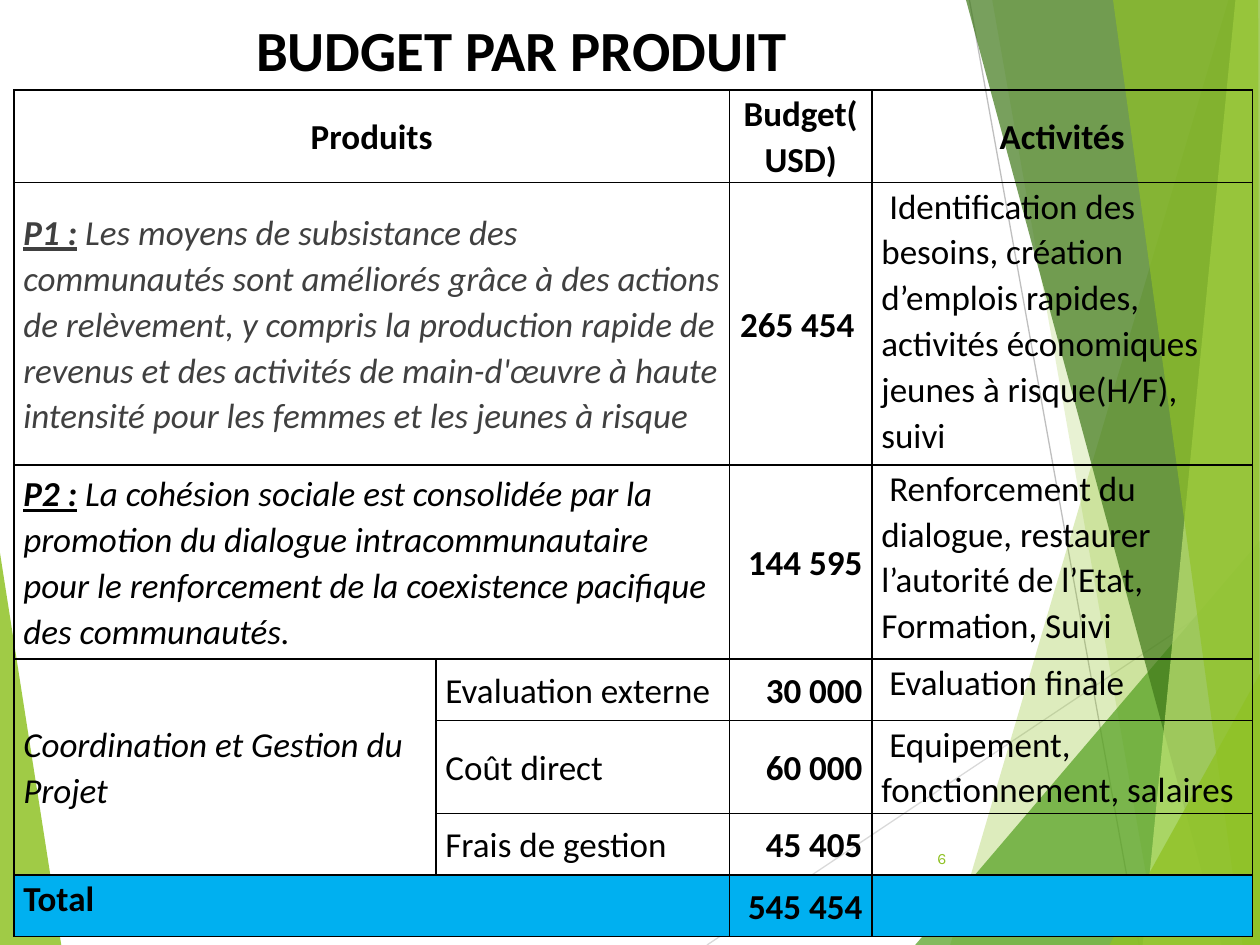
from lxml.etree import SubElement
from pptx import Presentation
from pptx.dml.color import RGBColor
from pptx.enum.shapes import MSO_CONNECTOR
from pptx.enum.text import MSO_ANCHOR, MSO_AUTO_SIZE, PP_ALIGN
from pptx.oxml import parse_xml
from pptx.oxml.ns import nsdecls, qn
from pptx.util import Pt

BLACK, GREY, GREEN, BLUE = "000000", "404040", "90C226", "00B0F0"
LEFT, CENTER, RIGHT = PP_ALIGN.LEFT, PP_ALIGN.CENTER, PP_ALIGN.RIGHT
WIDTH, HEIGHT = 720, 540


def rgb(value):
    return RGBColor.from_string(value)


class SlideWriter:
    """Keeps the style and the current slide; lengths are in points."""

    font = "Calibri"
    text_size = 20
    border = 1

    def __init__(self, slide):
        self.slide = slide

    def style(self, font, size, color=BLACK, bold=False, italic=False, name=None):
        font.name = name or self.font
        font.size = Pt(size)
        font.color.rgb = rgb(color)
        font.bold, font.italic = bold, italic

    def title(self, text, left, top, width, height):
        title = self.slide.shapes.title
        title.left, title.top = Pt(left), Pt(top)
        title.width, title.height = Pt(width), Pt(height)
        frame = title.text_frame
        frame.auto_size = MSO_AUTO_SIZE.NONE
        frame.vertical_anchor = MSO_ANCHOR.MIDDLE
        frame.text = text
        frame.paragraphs[0].alignment = CENTER
        self.style(frame.paragraphs[0].font, 32.4, bold=True)

    def page_number(self, text, left, top, width, height):
        box = self.slide.shapes.add_textbox(Pt(left), Pt(top), Pt(width), Pt(height))
        frame = box.text_frame
        frame.word_wrap = True
        frame.vertical_anchor = MSO_ANCHOR.MIDDLE
        frame.text = text
        frame.paragraphs[0].alignment = RIGHT
        self.style(frame.paragraphs[0].font, 9, GREEN, name="Karla")

    def facet(self, color, opacity, points):
        builder = self.slide.shapes.build_freeform(*points[0], scale=Pt(1))
        builder.add_line_segments(points[1:], close=True)
        facet = builder.convert_to_shape()
        facet.shadow.inherit = False
        facet.line.fill.background()
        facet.fill.solid()
        facet.fill.fore_color.rgb = rgb(color)
        tint = facet.fill._xPr.find(qn("a:solidFill"))[0]
        SubElement(tint, qn("a:alpha")).set("val", str(opacity * 1000))

    def thin_line(self, color, start, end):
        line = self.slide.shapes.add_connector(
            MSO_CONNECTOR.STRAIGHT, *map(Pt, start + end))
        line.line.color.rgb = rgb(color)
        line.line.width = Pt(0.75)
        SubElement(line._element.spPr, qn("a:effectLst"))

    def table(self, left, top, columns, rows):
        table = self.slide.shapes.add_table(
            len(rows), len(columns), Pt(left), Pt(top),
            Pt(sum(columns)), Pt(sum(rows))).table
        table.first_row = table.horz_banding = False
        for column, width in zip(table.columns, columns):
            column.width = Pt(width)
        for row, height in zip(table.rows, rows):
            row.height = Pt(height)
        return table

    def cell(self, cell, fill=None):
        if fill:
            cell.fill.solid()
            cell.fill.fore_color.rgb = rgb(fill)
        else:
            cell.fill.background()
        cell.margin_left = cell.margin_right = Pt(5.4)
        cell.margin_top = cell.margin_bottom = 0
        properties = cell._tc.get_or_add_tcPr()
        for index, side in enumerate("LRTB"):
            properties.insert(index, parse_xml(
                f'<a:ln{side} {nsdecls("a")} w="{Pt(self.border)}"><a:solidFill>'
                f'<a:srgbClr val="{BLACK}"/></a:solidFill></a:ln{side}>'))

    def cell_text(self, cell, text, align=LEFT, anchor=MSO_ANCHOR.MIDDLE,
                  label="", **look):
        cell.vertical_anchor = anchor
        paragraph = cell.text_frame.paragraphs[0]
        paragraph.alignment = align
        paragraph.line_spacing = 1.07
        self.style(paragraph.font, self.text_size, **look)
        if label:
            for part, underline in ((label, True), (" ", False)):
                run = paragraph.add_run()
                run.text = part
                run.font.bold, run.font.underline = True, underline
        paragraph.add_run().text = text


# Facets of the background: colour, opacity in percent, corners
FACETS = [
    (GREEN, 85, [(0, 316), (35.3, HEIGHT), (0, HEIGHT)]),
    (GREEN, 30, [(702, 0), (543, HEIGHT), (WIDTH, HEIGHT), (WIDTH, 0)]),
    (GREEN, 20, [(567, 0), (662, HEIGHT), (WIDTH, HEIGHT), (WIDTH, 0)]),
    ("54A021", 72, [(523, HEIGHT), (WIDTH, 309), (WIDTH, HEIGHT)]),
    ("3F7819", 70, [(552, 0), (698, HEIGHT), (WIDTH, HEIGHT), (WIDTH, 0)]),
    ("C0E474", 70, [(706, 0), (653, HEIGHT), (WIDTH, HEIGHT), (WIDTH, 0)]),
    (GREEN, 65, [(636, 0), (710, HEIGHT), (WIDTH, HEIGHT), (719, 0)]),
    (GREEN, 80, [(634, HEIGHT), (WIDTH, 385), (WIDTH, HEIGHT)]),
]

HEADINGS = {0: "Produits", 2: "Budget(USD)", 3: "Activités"}

# Label, description, colour
PRODUCTS = [
    ("P1 :", "Les moyens de subsistance des communautés sont améliorés grâce à "
     "des actions de relèvement, y compris la production rapide de revenus et des "
     "activités de main-d'œuvre à haute intensité pour les femmes et les jeunes "
     "à risque", GREY),
    ("P2 :", "La cohésion sociale est consolidée par la promotion du dialogue "
     "intracommunautaire pour le renforcement de la coexistence pacifique des "
     "communautés.", BLACK),
]
COSTS = ["Evaluation externe", "Coût direct", "Frais de gestion"]
BUDGETS = ["265 454 ", "144 595", "30 000", "60 000", "45 405", "545 454"]
ACTIVITIES = [
    " Identification des besoins, création d’emplois rapides, activités "
    "économiques jeunes à risque(H/F), suivi",
    " Renforcement du dialogue, restaurer l’autorité de l’Etat, Formation, Suivi",
    " Evaluation finale",
    " Equipement, fonctionnement, salaires",
]


def main():
    deck = Presentation()
    deck.slide_width, deck.slide_height = Pt(WIDTH), Pt(HEIGHT)
    writer = SlideWriter(deck.slides.add_slide(deck.slide_layouts[5]))

    # Background
    writer.facet(*FACETS[0])
    writer.thin_line("D9D9D9", (404, HEIGHT), (WIDTH, 329))
    writer.thin_line("BFBFBF", (554, 0), (651, HEIGHT))
    for facet in FACETS[1:]:
        writer.facet(*facet)

    # Title and page number
    writer.title("BUDGET PAR PRODUIT", 48, 5, 500, 46)
    writer.page_number("6", 507.6, 476, 40.3, 28.8)

    # Budget table: frame and merged cells
    budget = writer.table(7.9, 51.4, [241.2, 167.8, 81.4, 217.4],
                          [53, 161.3, 111, 35.2, 53, 35.2, 35.2])
    total = len(budget.rows) - 1
    for row in range(total + 1):
        for column in range(len(budget.columns)):
            writer.cell(budget.cell(row, column), BLUE if row == total else None)
    for row in (0, 1, 2, total):
        budget.cell(row, 0).merge(budget.cell(row, 1))
    budget.cell(3, 0).merge(budget.cell(5, 0))

    # Budget table: wording
    for column, heading in HEADINGS.items():
        writer.cell_text(budget.cell(0, column), heading, CENTER, bold=True)
    for row, (label, description, color) in enumerate(PRODUCTS, 1):
        writer.cell_text(budget.cell(row, 0), description, label=label,
                         color=color, italic=True)
    writer.cell_text(budget.cell(3, 0), "Coordination et Gestion du Projet", italic=True)
    for row, cost in enumerate(COSTS, 3):
        writer.cell_text(budget.cell(row, 1), cost)
    for row, amount in enumerate(BUDGETS, 1):
        writer.cell_text(budget.cell(row, 2), amount, RIGHT, bold=True)
    for row, activity in enumerate(ACTIVITIES, 1):
        writer.cell_text(budget.cell(row, 3), activity, anchor=MSO_ANCHOR.TOP)
    writer.cell_text(budget.cell(total, 0), "Total", anchor=MSO_ANCHOR.TOP, bold=True)

    deck.save("out.pptx")


if __name__ == "__main__":
    main()
